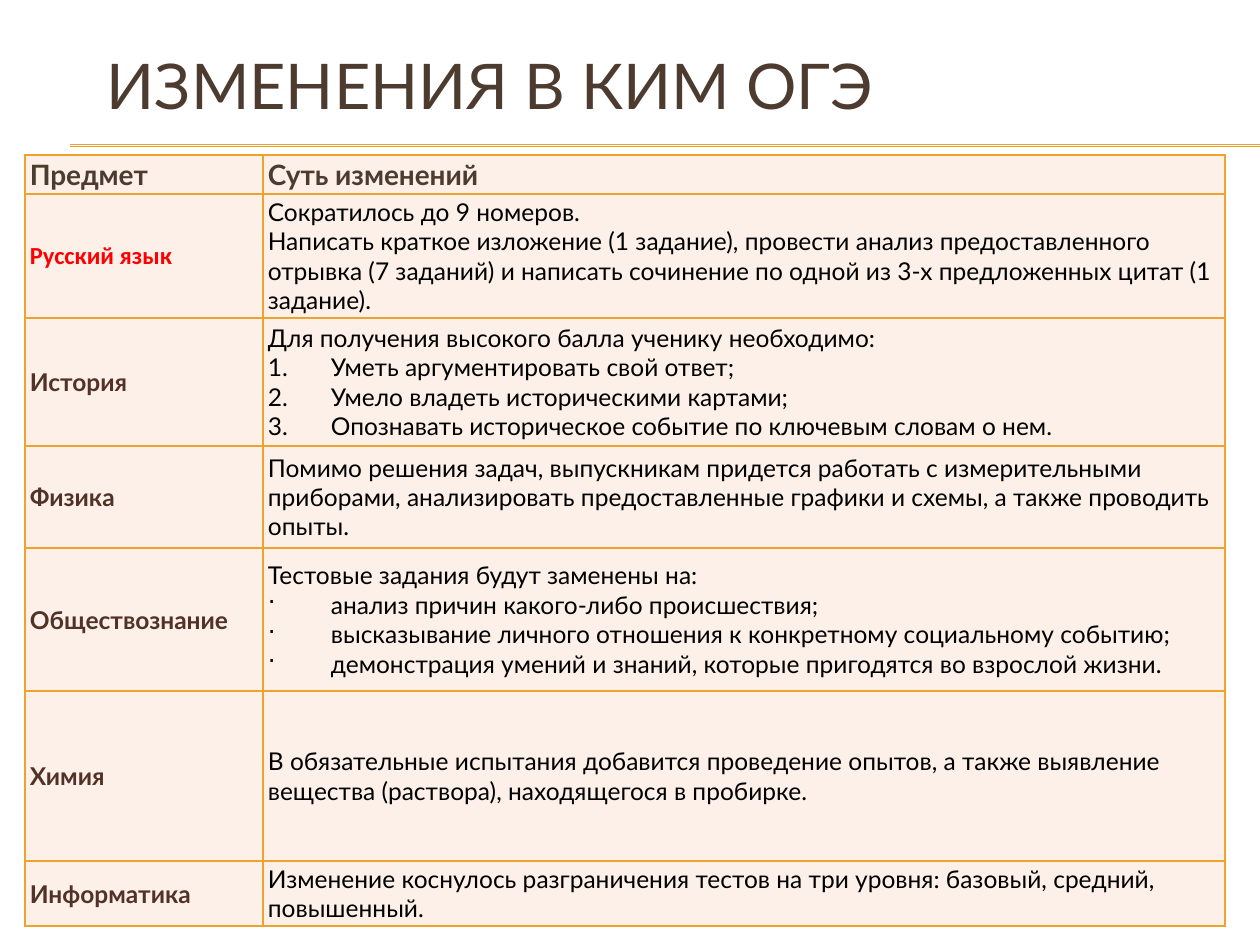
from lxml import etree
from pptx import Presentation
from pptx import util as u
from pptx.dml.color import RGBColor
from pptx.enum import shapes, text
from pptx.oxml import ns

Cm, Pt = u.Cm, u.Pt
GOLD, BROWN, SUBJECT, RED = "F0A22E", "4E3B30", "523227", "FF0000"
BLACK, CREAM = "000000", "FCF0E8"
NUMBER = ("a:buAutoNum", {"type": "arabicPeriod"})
DOT = ("a:buChar", {"char": "·"})

ROWS = [
    (2.5, "Русский язык", None, [
        "Сократилось до 9 номеров.",
        "Написать краткое изложение (1 задание), провести анализ предоставленного "
        "отрывка (7 заданий) и написать сочинение по одной из 3-х предложенных "
        "цитат (1 задание).",
    ]),
    (2.58, "История", NUMBER, [
        "Для получения высокого балла ученику необходимо:",
        "Уметь аргументировать свой ответ;",
        "Умело владеть историческими картами;",
        "Опознавать историческое событие по ключевым словам о нем.",
    ]),
    (2.06, "Физика", None, [
        "Помимо решения задач, выпускникам придется работать с измерительными "
        "приборами, анализировать предоставленные графики и схемы, а также "
        "проводить опыты.",
    ]),
    (2.88, "Обществознание", DOT, [
        "Тестовые задания будут заменены на:",
        "анализ причин какого-либо происшествия;",
        "высказывание личного отношения к конкретному социальному событию;",
        "демонстрация умений и знаний, которые пригодятся во взрослой жизни.",
    ]),
    (3.43, "Химия", None, [
        "В обязательные испытания добавится проведение опытов, а также выявление "
        "вещества (раствора), находящегося в пробирке.",
    ]),
    (1.31, "Информатика", None, [
        "Изменение коснулось разграничения тестов на три уровня: базовый, "
        "средний, повышенный.",
    ]),
]


def rgb(color):
    return RGBColor.from_string(color)


def add_run(p, content, size, color, bold=False, name="Lato"):
    r = p.add_run()
    r.text = content
    r.font.size = Pt(size)
    r.font.bold = bold
    r.font.name = name
    r.font.color.rgb = rgb(color)


def add_title(s, content):
    sp = s.shapes.title
    sp.left, sp.top, sp.width, sp.height = Cm(1.9), Cm(0.53), Cm(24.13), Cm(2.34)
    tf = sp.text_frame
    tf.auto_size = text.MSO_AUTO_SIZE.NONE
    tf.vertical_anchor = text.MSO_ANCHOR.MIDDLE
    p = tf.paragraphs[0]
    p.alignment = text.PP_ALIGN.LEFT
    add_run(p, content, 36, BROWN)


def add_rule(s, y):
    line = s.shapes.add_connector(
        shapes.MSO_CONNECTOR.STRAIGHT, Cm(1.42), Cm(y), Cm(25.4), Cm(y))
    line.line.color.rgb = rgb(GOLD)
    line.line.width = Pt(0.75)
    etree.SubElement(line._element.spPr, ns.qn("a:effectLst"))


def format_cell(cell):
    tc_pr = cell._tc.get_or_add_tcPr()
    for side in "LRTB":
        ln = etree.SubElement(tc_pr, ns.qn(f"a:ln{side}"), w=str(Pt(1)))
        fill = etree.SubElement(ln, ns.qn("a:solidFill"))
        etree.SubElement(fill, ns.qn("a:srgbClr"), val=GOLD)
    cell.fill.solid()
    cell.fill.fore_color.rgb = rgb(CREAM)
    cell.vertical_anchor = text.MSO_ANCHOR.MIDDLE
    cell.margin_left = cell.margin_right = Cm(0.1)
    cell.margin_top = cell.margin_bottom = Cm(0.05)


def set_bullet(p, bullet):
    tag, attributes = bullet
    p_pr = p._p.get_or_add_pPr()
    p_pr.set("marL", str(Cm(1.27)))
    p_pr.set("indent", str(-Cm(1.27)))
    etree.SubElement(p_pr, ns.qn(tag), attributes)


def fill_changes(cell, lines, bullet):
    tf = cell.text_frame
    for i, line in enumerate(lines):
        p = tf.add_paragraph() if i else tf.paragraphs[0]
        if i and bullet:
            set_bullet(p, bullet)
        add_run(p, line, 14, BLACK)


def add_changes_table(s):
    heights = [0.79] + [row[0] for row in ROWS]
    frame = s.shapes.add_table(
        len(heights), 2, Cm(0.5), Cm(3.12), Cm(24.2), Cm(sum(heights)))
    table = frame.table
    table.first_row = table.horz_banding = False
    for column, width in zip(table.columns, (4.8, 19.4)):
        column.width = Cm(width)
    for row, height in zip(table.rows, heights):
        row.height = Cm(height)
    for cell in table.iter_cells():
        format_cell(cell)
    for i, heading in enumerate(("Предмет", "Суть изменений")):
        add_run(table.cell(0, i).text_frame.paragraphs[0], heading, 16, BROWN, True)
    for i, (_, subject, bullet, lines) in enumerate(ROWS, 1):
        color, name = (RED, "Calibri") if i == 1 else (SUBJECT, "Lato")
        p = table.cell(i, 0).text_frame.paragraphs[0]
        add_run(p, subject, 14, color, True, name)
        fill_changes(table.cell(i, 1), lines, bullet)


def main():
    prs = Presentation()
    prs.slide_width, prs.slide_height = Cm(25.4), Cm(19.05)
    s = prs.slides.add_slide(prs.slide_layouts[5])
    add_title(s, "ИЗМЕНЕНИЯ В КИМ ОГЭ")
    for y in (2.92, 2.95):
        add_rule(s, y)
    add_changes_table(s)
    prs.save("out.pptx")


if __name__ == "__main__":
    main()
